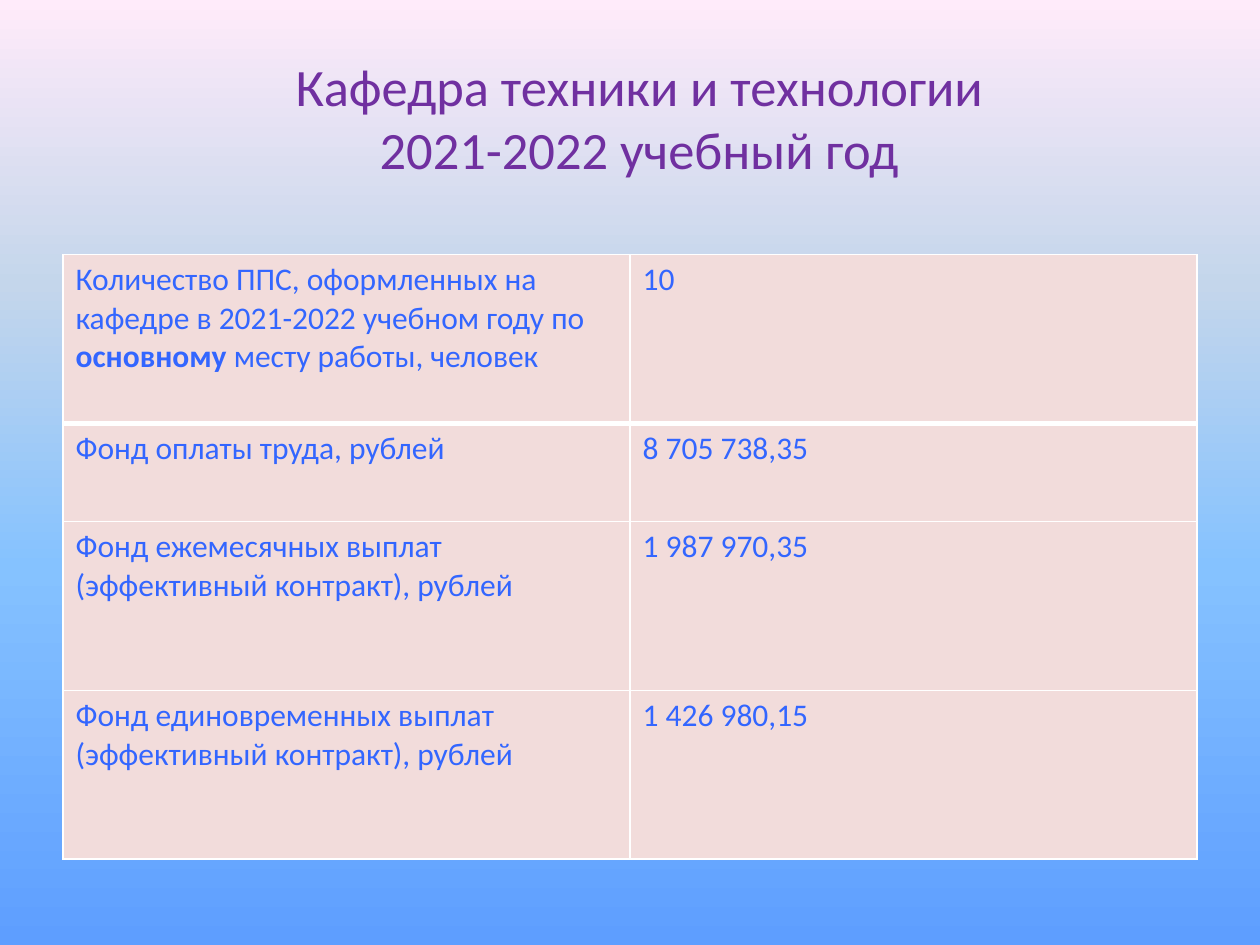
from lxml.etree import SubElement
from pptx import Presentation
from pptx.dml.color import RGBColor
from pptx.enum.text import MSO_ANCHOR, PP_ALIGN
from pptx.oxml import parse_xml
from pptx.oxml.ns import nsdecls, qn
from pptx.util import Inches, Pt

FONT = "Calibri"
PURPLE = RGBColor(0x70, 0x30, 0xA0)
BLUE = RGBColor(0x33, 0x66, 0xFF)
PINK = RGBColor(0xF2, 0xDC, 0xDB)
WHITE = RGBColor(0xFF, 0xFF, 0xFF)
GRADIENT = [
    (0, RGBColor(0x5E, 0x9E, 0xFF)),
    (40, RGBColor(0x85, 0xC2, 0xFF)),
    (70, RGBColor(0xC4, 0xD6, 0xEB)),
    (100, RGBColor(0xFF, 0xEB, 0xFA)),
]

TITLE_LINES = ["Кафедра техники и технологии", "2021-2022 учебный год"]
ROW_HEIGHTS = [1.34, 0.78, 1.34, 1.34]
ROWS = [
    (
        [
            ("Количество ППС, оформленных на кафедре в 2021-2022 учебном году по ", False),
            ("основному", True),
            (" месту работы, человек", False),
        ],
        "10",
    ),
    ([("Фонд оплаты труда, рублей", False)], "8 705 738,35"),
    ([("Фонд ежемесячных выплат (эффективный контракт), рублей", False)], "1 987 970,35"),
    ([("Фонд единовременных выплат (эффективный контракт), рублей", False)], "1 426 980,15"),
]


def paint_background(page):
    fill = page.background.fill
    fill.gradient()
    fill.gradient_angle = 90
    stops = page.element.xpath(".//p:bg//a:gsLst")[0]
    for stop in list(stops):
        stops.remove(stop)
    for position, color in GRADIENT:
        stop = SubElement(stops, qn("a:gs"), pos=str(position * 1000))
        SubElement(stop, qn("a:srgbClr"), val=str(color))


def add_span(para, text, size, color, bold=False):
    span = para.add_run()
    span.text = text
    span.font.name = FONT
    span.font.size = Pt(size)
    span.font.bold = bold
    span.font.color.rgb = color


def add_title(page):
    title = page.shapes.title
    title.left, title.top = Inches(0.5), Inches(0.3)
    title.width, title.height = Inches(9.15), Inches(1.25)
    title.text_frame.vertical_anchor = MSO_ANCHOR.MIDDLE
    para = title.text_frame.paragraphs[0]
    para.alignment = PP_ALIGN.CENTER
    for index, line in enumerate(TITLE_LINES):
        if index:
            para.add_line_break()
        add_span(para, line, 30, PURPLE)


def set_borders(cell, top, bottom):
    properties = cell._tc.get_or_add_tcPr()
    widths = {"lnL": 1, "lnR": 1, "lnT": top, "lnB": bottom}
    for index, (side, width) in enumerate(widths.items()):
        border = parse_xml(
            f'<a:{side} {nsdecls("a")} w="{Pt(width)}"><a:solidFill>'
            f'<a:srgbClr val="{WHITE}"/></a:solidFill></a:{side}>'
        )
        properties.insert(index, border)


def fill_cell(cell, spans, top, bottom):
    cell.fill.solid()
    cell.fill.fore_color.rgb = PINK
    set_borders(cell, top, bottom)
    para = cell.text_frame.paragraphs[0]
    for text, bold in spans:
        add_span(para, text, 18, BLUE, bold)


def add_funds_table(page):
    frame = page.shapes.add_table(
        len(ROWS), 2, Inches(0.5), Inches(2.02), Inches(9), Inches(sum(ROW_HEIGHTS))
    )
    table = frame.table
    for index, (label, value) in enumerate(ROWS):
        table.rows[index].height = Inches(ROW_HEIGHTS[index])
        top = 3 if index == 1 else 1
        bottom = 3 if index == 0 else 1
        for column, spans in enumerate([label, [(value, False)]]):
            fill_cell(table.cell(index, column), spans, top, bottom)


def main():
    deck = Presentation()
    deck.slide_width, deck.slide_height = Inches(10), Inches(7.5)
    page = deck.slides.add_slide(deck.slide_layouts[5])
    paint_background(page)
    add_title(page)
    add_funds_table(page)
    deck.save("out.pptx")


if __name__ == "__main__":
    main()
